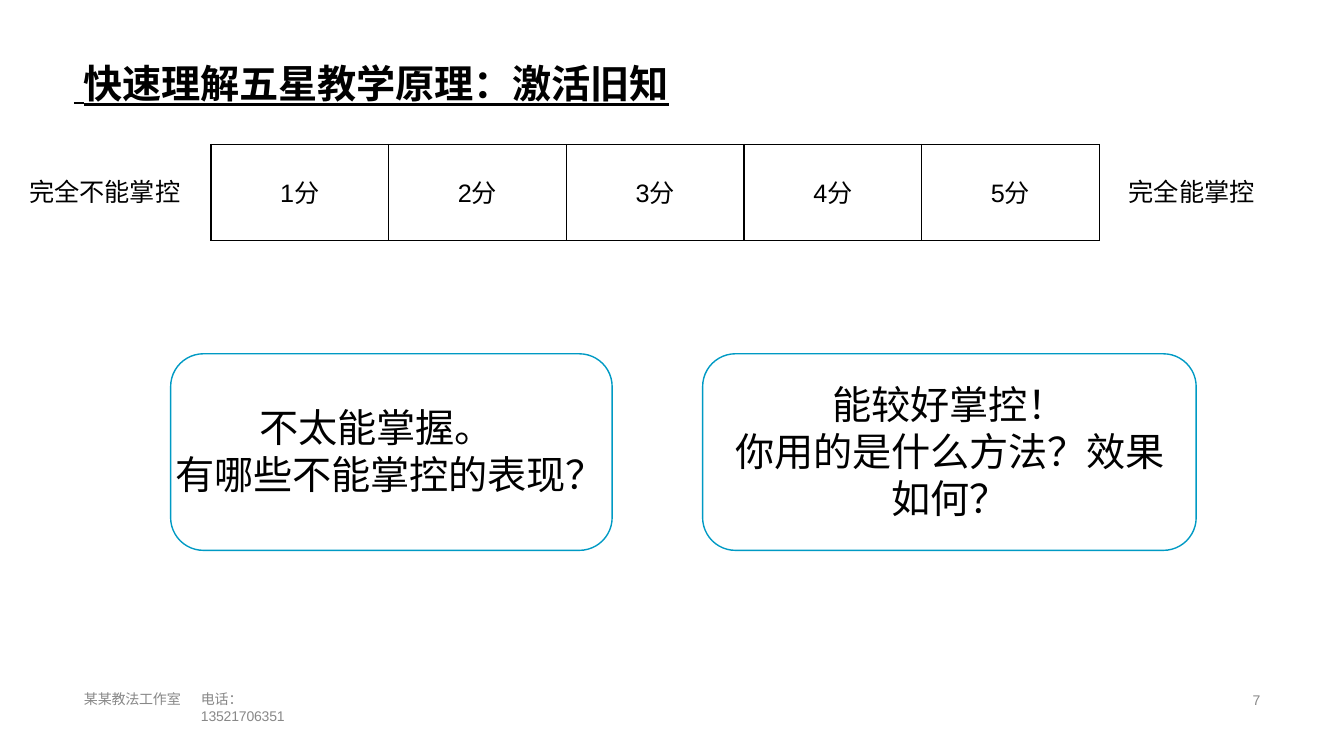
import pptx
import pptx.util
import pptx.dml.color
import pptx.enum.shapes
import pptx.enum.text
import pptx.oxml
import pptx.oxml.ns

HUES = {"ink": "000000", "gray": "888888", "line": "009AC4"}
HAN, LATIN, SERIF = "Noto Sans CJK SC", "Arial", "Times New Roman"
ALIGN = pptx.enum.text.PP_ALIGN
ANCHOR = pptx.enum.text.MSO_ANCHOR
SHAPE = pptx.enum.shapes.MSO_SHAPE


def paint(hue):
    return pptx.dml.color.RGBColor.from_string(HUES[hue])


def put(item, vals):
    for key, val in vals.items():
        setattr(item, key, val)


class Page:
    """Style and current slide; places are percent of the slide's size."""

    def __init__(self, deck):
        self.wide, self.high = deck.slide_width, deck.slide_height
        self.slide = deck.slides.add_slide(deck.slide_layouts[6])
        self.shapes = self.slide.shapes

    def rect(self, x, y, w, h):
        return [round(part * full / 100) for part, full in
                zip((x, y, w, h), (self.wide, self.high) * 2)]

    def run(self, para, text, font, size, hue="ink", gap=-10, **vals):
        run = para.add_run()
        run.text = text
        put(run.font, {"name": font, "size": pptx.util.Pt(size), **vals})
        run.font.color.rgb = paint(hue)
        props = run.font._element
        props.set("spc", str(gap))
        east = pptx.oxml.parse_xml(
            f'<a:ea {pptx.oxml.ns.nsdecls("a")} typeface="{font}"/>')
        props.find(pptx.oxml.ns.qn("a:latin")).addnext(east)

    def fill(self, frame, lines, size, align=ALIGN.LEFT, **vals):
        """Each line is a list of (text, font, format) runs."""
        for num, line in enumerate(lines):
            para = frame.paragraphs[0] if num == 0 else frame.add_paragraph()
            put(para, {"alignment": align,
                       "line_spacing": pptx.util.Pt(size * 1.2)})
            for text, font, more in line:
                self.run(para, text, font, size, **{**vals, **more})

    def text(self, place, lines, size, **vals):
        frame = self.shapes.add_textbox(*self.rect(*place)).text_frame
        put(frame, {"word_wrap": True, "margin_left": 0, "margin_right": 0,
                    "margin_bottom": 0, "margin_top": pptx.util.Inches(0.01)})
        self.fill(frame, lines, size, **vals)
        return frame

    def card(self, place):
        box = self.shapes.add_shape(SHAPE.ROUNDED_RECTANGLE, *self.rect(*place))
        box.shadow.inherit = False
        box.fill.background()
        box.line.color.rgb = paint("line")
        box.line.width = pptx.util.Pt(1)

    def edge(self, cell):
        props = cell._tc.get_or_add_tcPr()
        for num, side in enumerate(("lnL", "lnR", "lnT", "lnB")):
            props.insert(num, pptx.oxml.parse_xml(
                f'<a:{side} {pptx.oxml.ns.nsdecls("a")} w="12700"><a:solidFill>'
                f'<a:srgbClr val="{HUES["ink"]}"/></a:solidFill></a:{side}>'))

    def scale(self, place, count):
        table = self.shapes.add_table(1, count, *self.rect(*place)).table
        put(table, {"first_row": False, "horz_banding": False})
        for num, cell in enumerate(table.rows[0].cells, 1):
            put(cell, {"margin_left": 0, "margin_right": 0, "margin_bottom": 0,
                       "margin_top": pptx.util.Inches(0.05),
                       "vertical_anchor": ANCHOR.MIDDLE})
            cell.fill.background()
            self.edge(cell)
            self.fill(cell.text_frame, [[(str(num), LATIN, {}),
                                         ("分", HAN, {"gap": 0})]],
                      18, ALIGN.CENTER)


def main():
    deck = pptx.Presentation()
    put(deck, {"slide_width": pptx.util.Inches(13.33),
               "slide_height": pptx.util.Inches(7.5)})
    page = Page(deck)

    # Title
    page.text((5.5, 7.73, 89.1, 6.53),
              [[(" ", SERIF, {"gap": 10}),
                ("快速理解五星教学原理：激活旧知", HAN, {"bold": True})]],
              28, underline=True)

    # Rating scale and its two ends
    page.scale((15.7, 19.1, 66.1, 12.67), 5)
    page.text((2.17, 23.2, 11.5, 4.4), [[("完全不能掌控", HAN, {})]], 18, gap=0)
    page.text((84, 23.2, 9.6, 4.4), [[("完全能掌控", HAN, {})]], 18)

    # Answer cards
    page.card((12.7, 46.8, 32.85, 26))
    page.card((52.28, 46.8, 36.72, 26))
    left = page.text((13.05, 53.2, 32.25, 12.8),
                     [[("不太能掌握。", HAN, {})],
                      [("有哪些不能掌控的表现？", HAN, {})]], 28)
    left.paragraphs[0]._p.get_or_add_pPr().set(
        "marL", str(pptx.util.Inches(0.83)))
    page.text((54.53, 50.13, 32.25, 19.07),
              [[("能较好掌控！", HAN, {})],
               [("你用的是什么方法？效果 如何？", HAN, {})]],
              28, align=ALIGN.CENTER)

    # Footer
    page.text((6.25, 91.2, 7.5, 2.8), [[("某某教法工作室", HAN, {})]],
              10, hue="gray")
    page.text((14.95, 91.2, 9.68, 5),
              [[("电话：", HAN, {})], [("13521706351", LATIN, {})]],
              10, hue="gray")
    page.text((93.2, 91.33, 1, 2.4), [[("7", LATIN, {})]], 10, hue="gray")

    deck.save("out.pptx")


if __name__ == "__main__":
    main()
